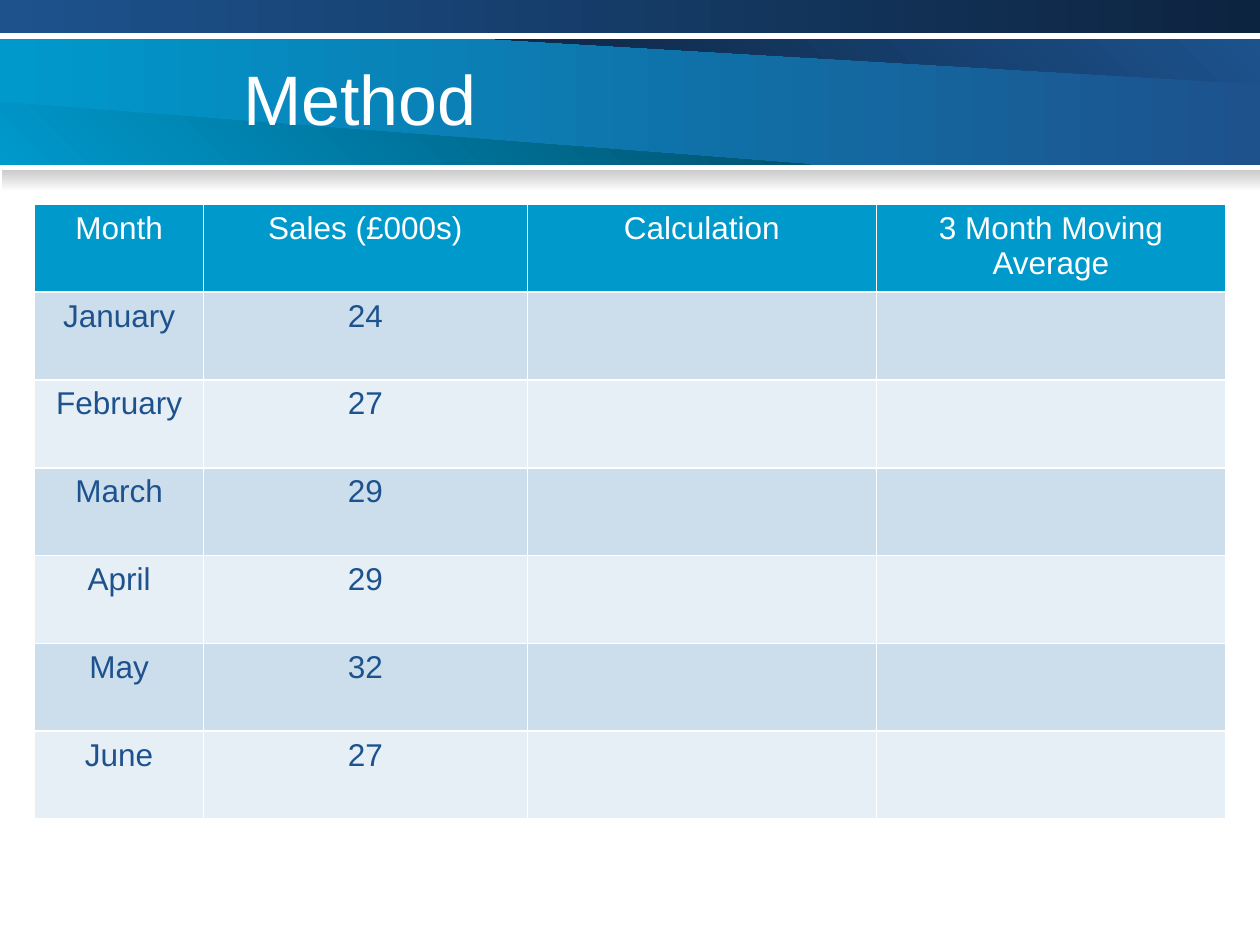
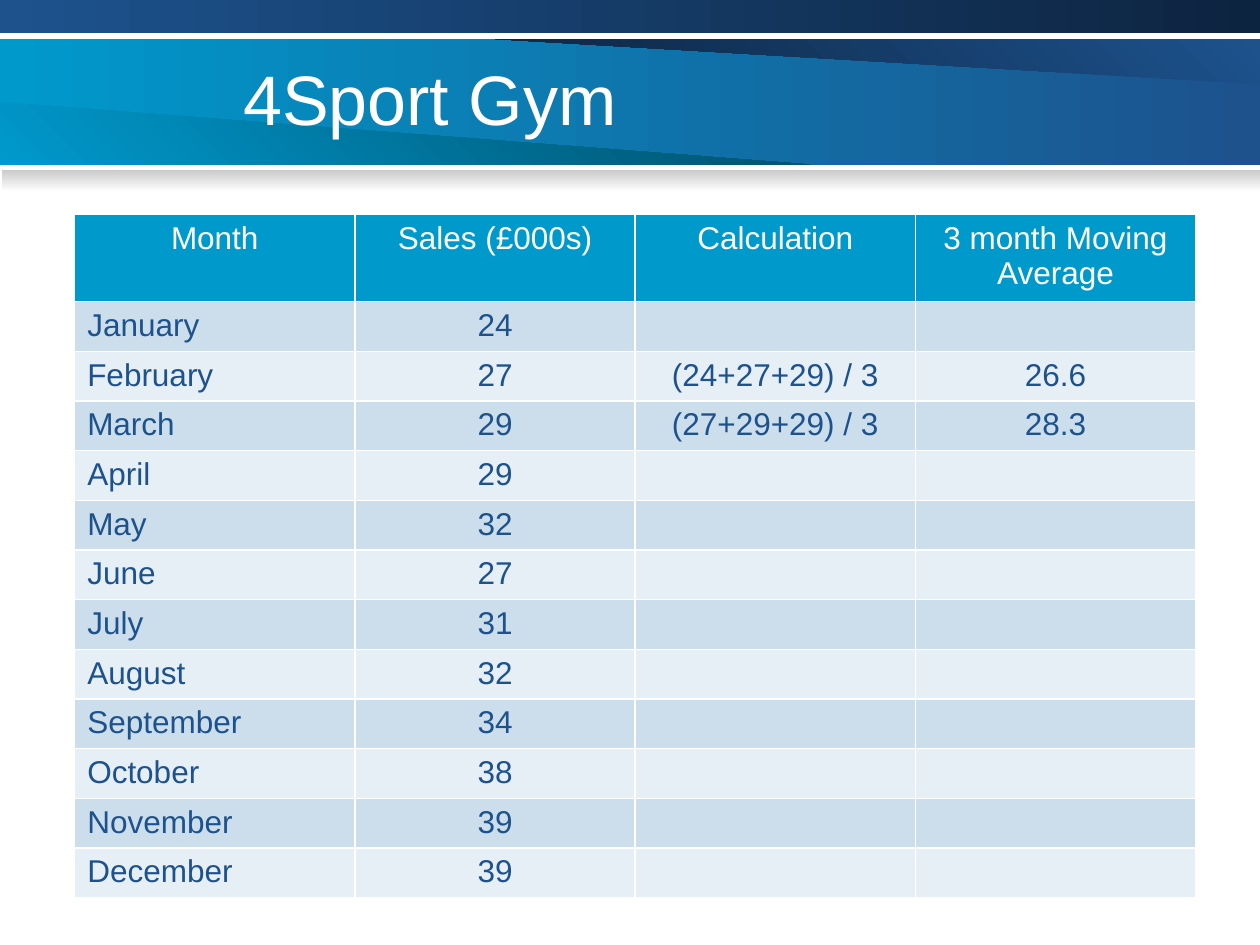
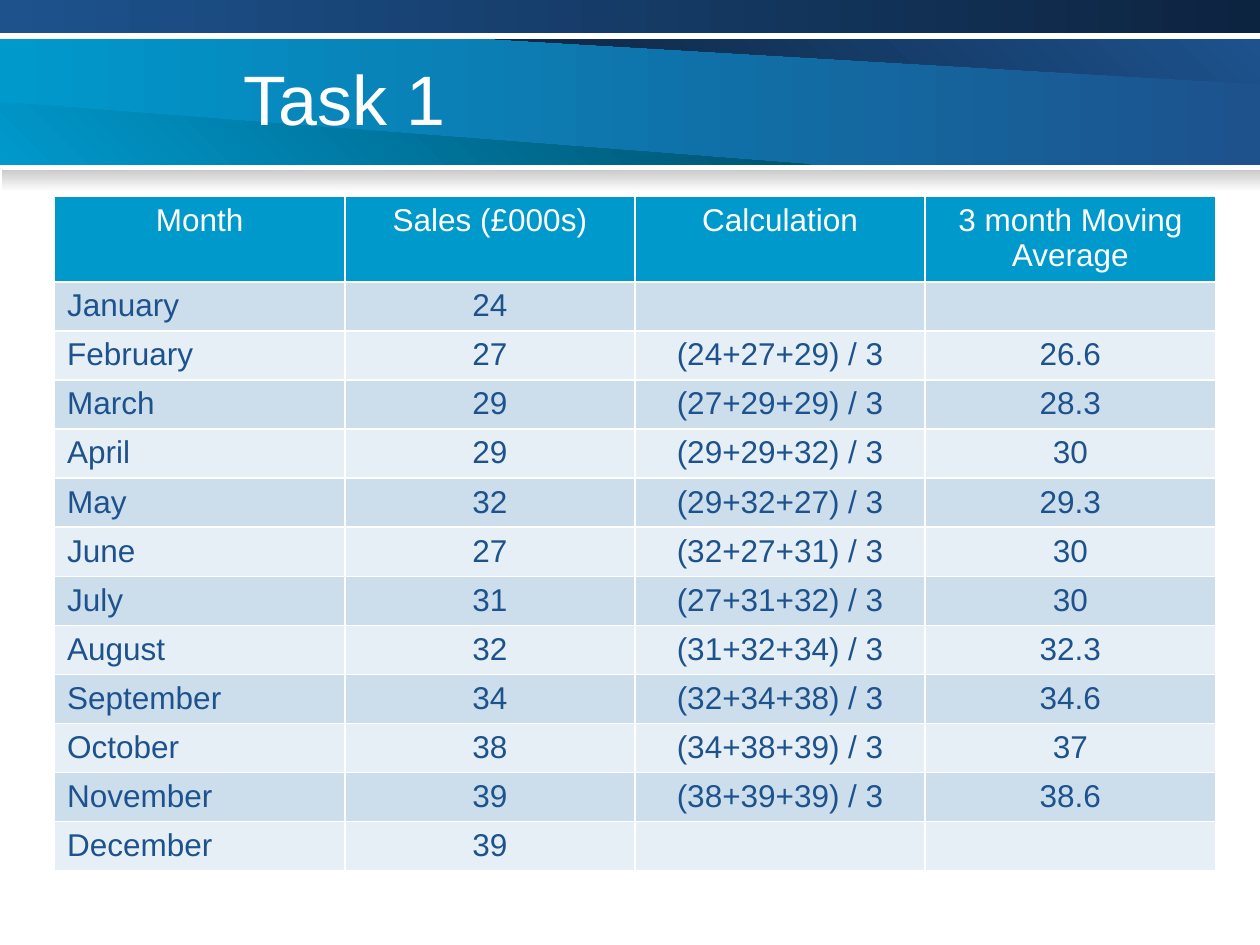
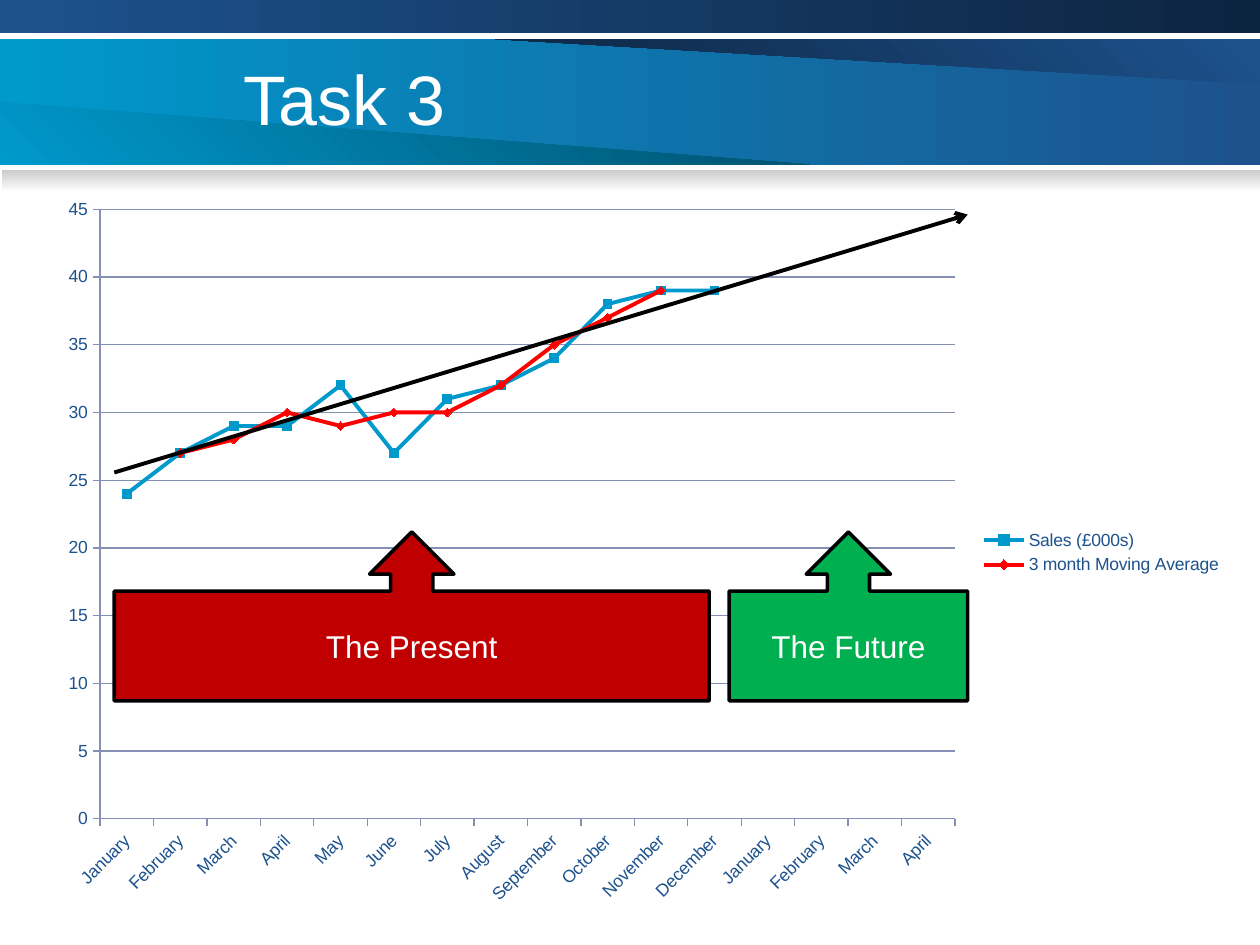
from lxml import etree
from pptx import Presentation
from pptx.chart.data import CategoryChartData
from pptx.dml.color import RGBColor
from pptx.enum.chart import XL_CHART_TYPE, XL_LEGEND_POSITION, XL_MARKER_STYLE, XL_TICK_MARK
from pptx.enum.shapes import MSO_CONNECTOR, MSO_SHAPE
from pptx.enum.text import MSO_ANCHOR, MSO_AUTO_SIZE, PP_ALIGN
from pptx.oxml.ns import qn
from pptx.util import Pt

LEFT, CENTER, MIDDLE = PP_ALIGN.LEFT, PP_ALIGN.CENTER, MSO_ANCHOR.MIDDLE
RECT, CALLOUT = MSO_SHAPE.RECTANGLE, MSO_SHAPE.UP_ARROW_CALLOUT
SQUARE, DIAMOND = XL_MARKER_STYLE.SQUARE, XL_MARKER_STYLE.DIAMOND

FONT = "Arial"
COLORS = {
    "white": "FFFFFF", "black": "000000", "cyan": "0099CC", "navy": "1D528D",
    "deep_cyan": "004F6B", "deep_navy": "0D2440",
    "row_dark": "CCDEEC", "row_light": "E7EFF6", "shadow": "CACACA",
    "axis": "8590B4", "red": "FF0000", "present": "C00000", "future": "00B050",
}

# ---- Content ----
MONTHS = ["January", "February", "March", "April", "May", "June", "July",
          "August", "September", "October", "November", "December"]
SALES = [24, 27, 29, 29, 32, 27, 31, 32, 34, 38, 39, 39]
WINDOWS = list(zip(SALES, SALES[1:], SALES[2:]))
AVERAGES = [sum(w) * 10 // 3 / 10 for w in WINDOWS]  # cut to one decimal
FUTURE_MONTHS = 4
SERIES_NAMES = ("Sales (£000s)", "3 month Moving Average")
HEADER = ["Month", SERIES_NAMES[0], "Calculation", SERIES_NAMES[1]]


def sales_rows(months, worked):
    """Rows of the sales table, with the first `worked` averages filled in."""
    rows = []
    for i in range(months):
        row = [MONTHS[i], str(SALES[i]), "", ""]
        if 1 <= i <= worked:
            row[2] = "({}+{}+{}) / 3".format(*WINDOWS[i - 1])
            row[3] = f"{AVERAGES[i - 1]:g}"
        rows.append(row)
    return rows


TABLE_SLIDES = [
    {"title": "Method", "left": 19.8, "top": 116.8, "cols": [96.5, 185, 199.5, 199.5],
     "heights": (50.2, 50.2), "month_align": CENTER,
     "rows": [HEADER[:3] + ["3 Month Moving Average"]] + sales_rows(6, 0)},
    {"title": "4Sport Gym", "left": 42.7, "top": 122.7, "cols": [160.15] * 4,
     "heights": (49.7, 28.4), "month_align": LEFT,
     "rows": [HEADER] + sales_rows(12, 2)},
    {"title": "Task 1", "left": 31.2, "top": 112.4, "cols": [165.85] * 4,
     "heights": (48.7, 28.05), "month_align": LEFT,
     "rows": [HEADER] + sales_rows(12, len(WINDOWS))},
]
CALLOUTS = [("The Present", "present", 65.3, 340), ("The Future", "future", 416.7, 136.3)]
CHART_WIDTH, CHART_HEIGHT = 680.4, 419.8


# ---- Shared helpers ----
def rgb(name):
    return RGBColor.from_string(COLORS[name])


def set_font(font, size, color):
    font.name, font.size, font.bold = FONT, Pt(size), False
    font.color.rgb = rgb(color)


def write(tf, text, size, color, align):
    p = tf.paragraphs[0]
    p.text, p.alignment = text, align
    set_font(p.font, size, color)


def paint_gradient(sp, start, end, angle):
    sp.shadow.inherit = False
    sp.line.fill.background()
    sp.fill.gradient()
    sp.fill.gradient_angle = angle
    for stop, color in zip(sp.fill.gradient_stops, (start, end)):
        stop.color.rgb = rgb(color)


def add_band(s, left, top, width, height, *gradient):
    sp = s.shapes.add_shape(RECT, Pt(left), Pt(top), Pt(width), Pt(height))
    paint_gradient(sp, *gradient)
    return sp


def add_wedge(s, points, *gradient):
    start, *rest = [(Pt(x), Pt(y)) for x, y in points]
    fb = s.shapes.build_freeform(*start)
    fb.add_line_segments(rest, close=True)
    sp = fb.convert_to_shape()
    paint_gradient(sp, *gradient)
    return sp


def decorate_layout(layout, s):
    """Draw the header bands on a slide, then move them into its layout."""
    for ph in list(layout.placeholders):
        if ph.placeholder_format.idx:
            ph._element.getparent().remove(ph._element)
    parts = [
        add_band(s, 0, 22.3, 720, 72, "cyan", "navy", 0),
        add_wedge(s, [(283, 22.3), (720, 48), (720, 22.3)], "navy", "deep_navy", 225),
        add_wedge(s, [(0, 58.3), (463, 94), (0, 94)], "cyan", "deep_cyan", 45),
        add_band(s, 0, 0, 720, 18.9, "navy", "deep_navy", 0),
        add_band(s, 0.9, 97, 719.1, 12.6, "shadow", "white", 270),
    ]
    tree = layout.shapes._spTree
    for i, sp in enumerate(parts):
        tree.insert(2 + i, sp._element)


def add_slide(prs, title):
    s = prs.slides.add_slide(prs.slide_layouts[5])
    sp = s.shapes.title
    sp.left, sp.top, sp.width, sp.height = Pt(131.8), Pt(21.6), Pt(522), Pt(68.4)
    tf = sp.text_frame
    tf.vertical_anchor, tf.auto_size, tf.word_wrap = MIDDLE, MSO_AUTO_SIZE.NONE, True
    write(tf, title, 40, "white", LEFT)
    return s


# ---- Table ----
def set_borders(cell):
    tcPr = cell._tc.get_or_add_tcPr()
    for side in "LRTB":
        ln = etree.SubElement(tcPr, qn("a:ln" + side), w=str(Pt(1)))
        fill = etree.SubElement(ln, qn("a:solidFill"))
        etree.SubElement(fill, qn("a:srgbClr"), val=COLORS["white"])


def set_empty_font(cell, size):
    """Keep an empty cell as tall as a line of the table font."""
    p = cell.text_frame.paragraphs[0]
    end = etree.SubElement(p._p, qn("a:endParaRPr"), sz=str(size * 100))
    etree.SubElement(end, qn("a:latin"), typeface=FONT)


def add_sales_table(s, spec):
    rows, cols = spec["rows"], spec["cols"]
    head, body = spec["heights"]
    heights = [head] + [body] * (len(rows) - 1)
    table = s.shapes.add_table(len(rows), len(cols), Pt(spec["left"]), Pt(spec["top"]),
                               Pt(sum(cols)), Pt(sum(heights))).table
    for col, width in zip(table.columns, cols):
        col.width = Pt(width)
    for i, row in enumerate(rows):
        table.rows[i].height = Pt(heights[i])
        fill = "cyan" if i == 0 else ("row_light", "row_dark")[i % 2]
        for j, text in enumerate(row):
            cell = table.cell(i, j)
            set_borders(cell)
            cell.fill.solid()
            cell.fill.fore_color.rgb = rgb(fill)
            if text:
                align = spec["month_align"] if i and j == 0 else CENTER
                write(cell.text_frame, text, 18, "navy" if i else "white", align)
            else:
                set_empty_font(cell, 18)


# ---- Chart ----
def place_plot(chart, left, top, width, height):
    """Fix the inner plot area, given in points from the chart's corner."""
    area = chart._chartSpace.chart.plotArea
    for old in area.findall(qn("c:layout")):
        area.remove(old)
    layout = etree.Element(qn("c:layout"))
    area.insert(0, layout)
    manual = etree.SubElement(layout, qn("c:manualLayout"))
    settings = {"layoutTarget": "inner", "xMode": "edge", "yMode": "edge",
                "x": left / CHART_WIDTH, "y": top / CHART_HEIGHT,
                "w": width / CHART_WIDTH, "h": height / CHART_HEIGHT}
    for tag, val in settings.items():
        etree.SubElement(manual, qn("c:" + tag)).set("val", str(val))


def add_sales_chart(s):
    cd = CategoryChartData()
    cd.categories = MONTHS + MONTHS[:FUTURE_MONTHS]
    blank = [None] * FUTURE_MONTHS
    cd.add_series(SERIES_NAMES[0], SALES + blank)
    cd.add_series(SERIES_NAMES[1], [None] + [round(a) for a in AVERAGES] + [None] + blank)
    chart = s.shapes.add_chart(XL_CHART_TYPE.LINE_MARKERS, Pt(25.2), Pt(105.8),
                               Pt(CHART_WIDTH), Pt(CHART_HEIGHT), cd).chart
    chart.has_title = False
    set_font(chart.font, 10, "navy")
    chart.has_legend = True
    chart.legend.position = XL_LEGEND_POSITION.RIGHT
    chart.legend.include_in_layout = False
    place_plot(chart, 32, 13.8, 488.5, 348.4)

    plot = chart.plots[0]
    plot.vary_by_categories = False
    for ser, color, style in zip(plot.series, ("cyan", "red"), (SQUARE, DIAMOND)):
        ser.smooth = False
        ser.format.line.width = Pt(2.25)
        ser.format.line.color.rgb = rgb(color)
        ser.marker.style, ser.marker.size = style, 5
        ser.marker.format.fill.solid()
        ser.marker.format.fill.fore_color.rgb = rgb(color)
        ser.marker.format.line.color.rgb = rgb(color)

    months, values = chart.category_axis, chart.value_axis
    values.minimum_scale, values.maximum_scale, values.major_unit = 0, 45, 5
    values.has_major_gridlines = True
    for axis in (months, values):
        axis.major_tick_mark = XL_TICK_MARK.OUTSIDE
        set_font(axis.tick_labels.font, 10, "navy")
    for part in (months, values, values.major_gridlines):
        part.format.line.color.rgb = rgb("axis")
        part.format.line.width = Pt(0.75)
    months._element.find(qn("c:txPr")).find(qn("a:bodyPr")).set("rot", "-2700000")


def add_trend_arrow(s):
    cx = s.shapes.add_connector(MSO_CONNECTOR.STRAIGHT, Pt(65.3), Pt(270), Pt(553), Pt(122.6))
    cx.line.color.rgb = rgb("black")
    cx.line.width = Pt(2.25)
    etree.SubElement(cx.line._get_or_add_ln(), qn("a:tailEnd"), type="arrow")
    etree.SubElement(cx._element.spPr, qn("a:effectLst"))


def add_callout(s, text, color, left, width):
    sp = s.shapes.add_shape(CALLOUT, Pt(left), Pt(304), Pt(width), Pt(96.5))
    sp.shadow.inherit = False
    sp.fill.solid()
    sp.fill.fore_color.rgb = rgb(color)
    sp.line.color.rgb = rgb("black")
    sp.line.width = Pt(2)
    sp.text_frame.vertical_anchor = MIDDLE
    write(sp.text_frame, text, 18, "white", CENTER)


def main():
    prs = Presentation()
    prs.slide_width, prs.slide_height = Pt(720), Pt(540)

    # Table slides
    for spec in TABLE_SLIDES:
        s = add_slide(prs, spec["title"])
        if len(prs.slides) == 1:
            decorate_layout(s.slide_layout, s)
        add_sales_table(s, spec)

    # Chart slide
    s = add_slide(prs, "Task 3")
    add_sales_chart(s)
    add_trend_arrow(s)
    for callout in CALLOUTS:
        add_callout(s, *callout)

    prs.save("out.pptx")


if __name__ == "__main__":
    main()
